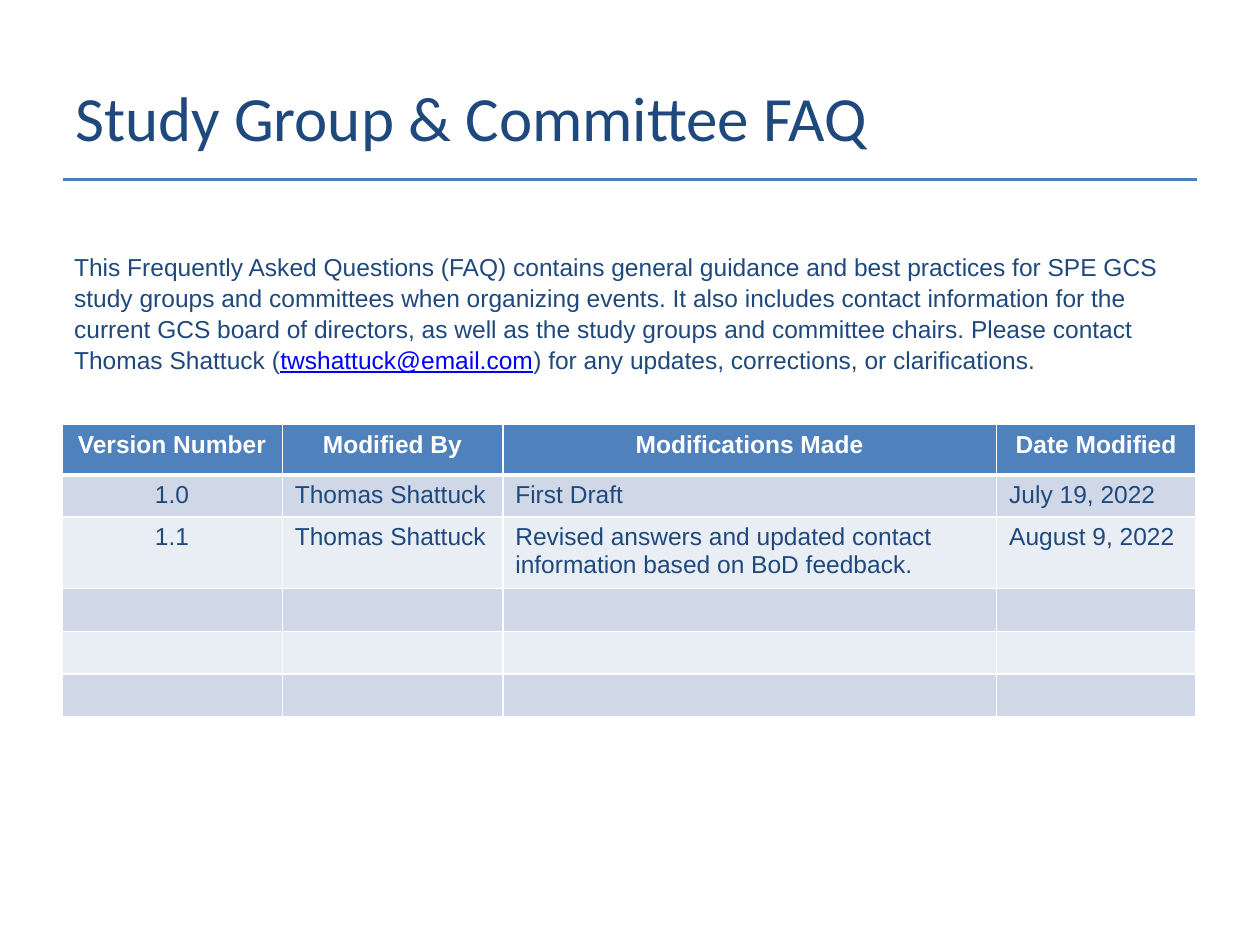
from lxml.etree import SubElement
from pptx import Presentation
from pptx.dml.color import RGBColor
from pptx.enum.shapes import MSO_CONNECTOR
from pptx.enum.text import MSO_ANCHOR, PP_ALIGN
from pptx.oxml.ns import qn
from pptx.util import Inches, Pt

NAVY = RGBColor(0x1F, 0x49, 0x7D)
BLUE = RGBColor(0x4F, 0x81, 0xBD)
RULE_BLUE = RGBColor(0x4B, 0x7E, 0xBC)
LINK_BLUE = RGBColor(0x00, 0x00, 0xFF)
DARK_BAND = RGBColor(0xD0, 0xD8, 0xE8)
LIGHT_BAND = RGBColor(0xE9, 0xED, 0xF4)
WHITE = RGBColor(0xFF, 0xFF, 0xFF)

TITLE_FORMAT = {"name": "Calibri", "size": Pt(36)}
BODY_FORMAT = {"name": "Arial", "size": Pt(14)}
HEADER_FORMAT = {**BODY_FORMAT, "bold": True}
LINK_FORMAT = {**BODY_FORMAT, "underline": True}


def add_run(paragraph, text, font_format, color):
    run = paragraph.add_run()
    run.text = text
    for name, value in font_format.items():
        setattr(run.font, name, value)
    run.font.color.rgb = color


def add_border(cell, side, points):
    line = SubElement(cell._tc.get_or_add_tcPr(), qn(f"a:ln{side}"), w=str(Pt(points)))
    fill = SubElement(line, qn("a:solidFill"))
    SubElement(fill, qn("a:srgbClr"), val=str(WHITE))


presentation = Presentation()
presentation.slide_width = Inches(10)
presentation.slide_height = Inches(7.5)
slide = presentation.slides.add_slide(presentation.slide_layouts[6])
width, height = presentation.slide_width, presentation.slide_height
left, content_width = int(width * 0.05), int(width * 0.9)

rule_top = int(height * 0.19)
rule = slide.shapes.add_connector(
    MSO_CONNECTOR.STRAIGHT, left, rule_top, left + content_width, rule_top
)
rule.line.color.rgb = RULE_BLUE
rule.line.width = Pt(1.75)
SubElement(rule._element.spPr, qn("a:effectLst"))

title = slide.shapes.add_textbox(left, int(height * 0.04), content_width, Inches(1.25))
title.text_frame.word_wrap = True
title.text_frame.vertical_anchor = MSO_ANCHOR.MIDDLE
add_run(title.text_frame.paragraphs[0], "Study Group & Committee FAQ", TITLE_FORMAT, NAVY)

introduction = slide.shapes.add_textbox(
    Inches(0.49), Inches(1.94), content_width, Inches(1.04)
)
introduction.text_frame.word_wrap = True
paragraph = introduction.text_frame.paragraphs[0]
paragraph.line_spacing = 1.05
for text, font_format, color in (
    (
        "This Frequently Asked Questions (FAQ) contains general guidance and best "
        "practices for SPE GCS study groups and committees when organizing events. "
        "It also includes contact information for the current GCS board of directors, "
        "as well as the study groups and committee chairs. Please contact "
        "Thomas Shattuck (",
        BODY_FORMAT,
        NAVY,
    ),
    ("twshattuck@email.com", LINK_FORMAT, LINK_BLUE),
    (") for any updates, corrections, or clarifications.", BODY_FORMAT, NAVY),
):
    add_run(paragraph, text, font_format, color)

versions = [
    ("Version Number", "Modified By", "Modifications Made", "Date Modified"),
    ("1.0", "Thomas Shattuck", "First Draft", "July 19, 2022"),
    (
        "1.1",
        "Thomas Shattuck",
        "Revised answers and updated contact information based on BoD feedback.",
        "August 9, 2022",
    ),
] + [("",) * 4] * 3
column_widths = (1.75, 1.75, 3.92, 1.58)
row_heights = (0.4, 0.32, 0.54, 0.34, 0.34, 0.34)

table = slide.shapes.add_table(
    len(versions), len(column_widths), Inches(0.49), Inches(3.37),
    content_width, Inches(sum(row_heights)),
).table
for column, column_width in zip(table.columns, column_widths):
    column.width = Inches(column_width)
for row, row_height in zip(table.rows, row_heights):
    row.height = Inches(row_height)

for row_index, version in enumerate(versions):
    is_header = row_index == 0
    band = BLUE if is_header else (LIGHT_BAND, DARK_BAND)[row_index % 2]
    for column_index, text in enumerate(version):
        cell = table.cell(row_index, column_index)
        for side, points in (
            ("L", 1),
            ("R", 1),
            ("T", 3 if row_index == 1 else 1),
            ("B", 3 if is_header else 1),
        ):
            add_border(cell, side, points)
        cell.fill.solid()
        cell.fill.fore_color.rgb = band
        paragraph = cell.text_frame.paragraphs[0]
        if is_header or column_index == 0:
            paragraph.alignment = PP_ALIGN.CENTER
        if text:
            add_run(
                paragraph,
                text,
                HEADER_FORMAT if is_header else BODY_FORMAT,
                WHITE if is_header else NAVY,
            )
        else:
            SubElement(paragraph._p, qn("a:endParaRPr"), sz="1400")

presentation.save("out.pptx")
